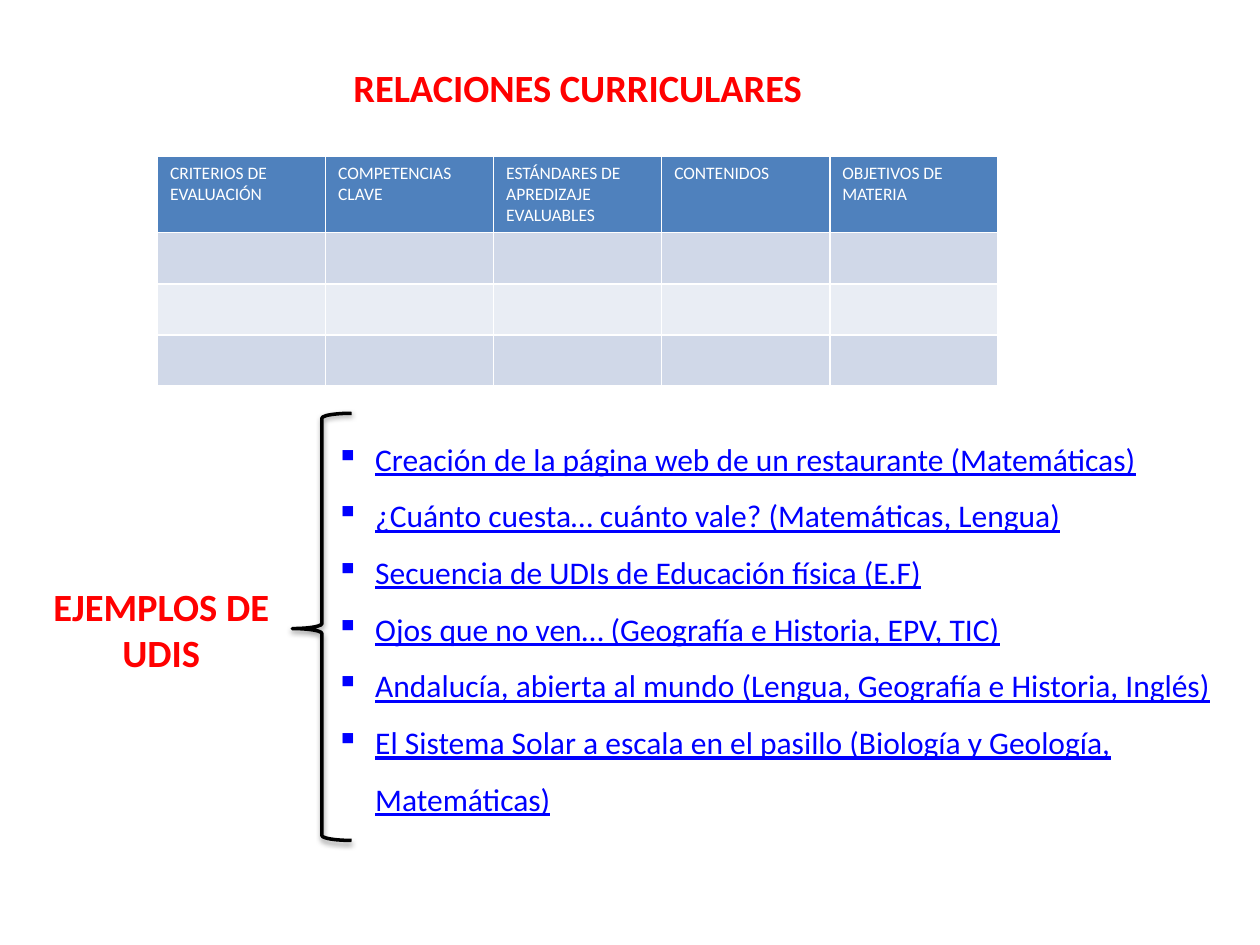
from lxml import etree
from pptx import Presentation
from pptx.dml.color import RGBColor
from pptx.enum.shapes import MSO_SHAPE
from pptx.enum.text import MSO_ANCHOR, PP_ALIGN
from pptx.oxml import parse_xml
from pptx.oxml.ns import nsdecls, qn
from pptx.util import Inches, Pt

LEFT_BRACE = MSO_SHAPE.LEFT_BRACE
LEFT, CENTER = PP_ALIGN.LEFT, PP_ALIGN.CENTER
TOP = MSO_ANCHOR.TOP

FONT = "Calibri"
RED = RGBColor(0xFF, 0x00, 0x00)
LINK_BLUE = RGBColor(0x00, 0x00, 0xFF)
BLACK = RGBColor(0x00, 0x00, 0x00)
WHITE = RGBColor(0xFF, 0xFF, 0xFF)
HEADER_BLUE = RGBColor(0x4F, 0x81, 0xBD)
BAND_DARK = RGBColor(0xD0, 0xD8, 0xE8)
BAND_LIGHT = RGBColor(0xE9, 0xED, 0xF4)

TABLE_HEADERS = [
    "CRITERIOS DE EVALUACIÓN",
    "COMPETENCIAS CLAVE",
    "ESTÁNDARES DE APREDIZAJE EVALUABLES",
    "CONTENIDOS",
    "OBJETIVOS DE MATERIA",
]
ROW_FILLS = [HEADER_BLUE, BAND_DARK, BAND_LIGHT, BAND_DARK]
HEADER_HEIGHT = Inches(0.6)

EXAMPLES = [
    "Creación de la página web de un restaurante (Matemáticas)",
    "¿Cuánto cuesta… cuánto vale? (Matemáticas, Lengua)",
    "Secuencia de UDIs de Educación física (E.F)",
    "Ojos que no ven… (Geografía e Historia, EPV, TIC)",
    "Andalucía, abierta al mundo (Lengua, Geografía e Historia, Inglés)",
    "El Sistema Solar a escala en el pasillo (Biología y Geología, Matemáticas)",
]


def add_bullet(paragraph, character, indent):
    properties = paragraph._p.get_or_add_pPr()
    properties.set("marL", str(indent))
    properties.set("indent", str(-indent))
    etree.SubElement(properties, qn("a:buChar")).set("char", character)


def write_text(frame, lines, size, color, bold=False, underline=False,
               align=LEFT, line_spacing=1.0, bullet=None):
    """Write one paragraph per line, all in the same format."""
    frame.word_wrap = True
    frame.vertical_anchor = TOP
    for index, line in enumerate(lines):
        paragraph = frame.paragraphs[0] if index == 0 else frame.add_paragraph()
        paragraph.alignment = align
        paragraph.line_spacing = line_spacing
        if bullet:
            add_bullet(paragraph, bullet, Inches(0.31))
        run = paragraph.add_run()
        run.text = line
        font = run.font
        font.name = FONT
        font.size = Pt(size)
        font.bold = bold
        font.underline = underline
        font.color.rgb = color


def set_cell_borders(cell, color, width):
    properties = cell._tc.get_or_add_tcPr()
    for position, side in enumerate(("lnL", "lnR", "lnT", "lnB")):
        properties.insert(position, parse_xml(
            f'<a:{side} {nsdecls("a")} w="{width}"><a:solidFill>'
            f'<a:srgbClr val="{color}"/></a:solidFill></a:{side}>'))


def add_title(slide, left, top, width, height):
    title = slide.shapes.title
    title.left, title.top, title.width, title.height = left, top, width, height
    write_text(title.text_frame, ["RELACIONES CURRICULARES"], 22, RED,
               bold=True, align=CENTER)


def add_curriculum_table(slide, left, top, width, height):
    table = slide.shapes.add_table(
        len(ROW_FILLS), len(TABLE_HEADERS), left, top, width, height).table
    body_height = (height - HEADER_HEIGHT) // (len(ROW_FILLS) - 1)
    for row_index, (row, fill) in enumerate(zip(table.rows, ROW_FILLS)):
        row.height = body_height if row_index else HEADER_HEIGHT
        for cell, header in zip(row.cells, TABLE_HEADERS):
            cell.fill.solid()
            cell.fill.fore_color.rgb = fill
            set_cell_borders(cell, WHITE, Pt(1))
            if row_index == 0:
                write_text(cell.text_frame, [header], 10, WHITE)


def add_brace(slide, left, top, width, height):
    brace = slide.shapes.add_shape(LEFT_BRACE, left, top, width, height)
    brace.adjustments[0] = 0.083
    brace.adjustments[1] = 0.504
    brace.fill.background()
    brace.line.color.rgb = BLACK
    brace.line.width = Pt(2)
    brace._element.spPr.append(parse_xml(
        f'<a:effectLst {nsdecls("a")}>'
        f'<a:outerShdw blurRad="{Pt(3.1)}" dist="{Pt(1.6)}" dir="5400000" '
        f'rotWithShape="0"><a:srgbClr val="{BLACK}"><a:alpha val="38000"/>'
        '</a:srgbClr></a:outerShdw></a:effectLst>'))


def add_examples(slide, left, top, width, height):
    """Place the label, the brace and the list of example units."""
    label = slide.shapes.add_textbox(
        left, top + Inches(1.3), Inches(2.56), Inches(0.84))
    write_text(label.text_frame, ["EJEMPLOS DE", "UDIS"], 22, RED,
               bold=True, align=CENTER)
    add_brace(slide, left + Inches(2.32), top, Inches(0.47), Inches(3.39))
    list_offset = Inches(2.57)
    example_list = slide.shapes.add_textbox(
        left + list_offset, top + Inches(0.01), width - list_offset, height)
    write_text(example_list.text_frame, EXAMPLES, 18, LINK_BLUE,
               underline=True, line_spacing=1.5, bullet="▪")


def main():
    presentation = Presentation()
    presentation.slide_width = Inches(10)
    presentation.slide_height = Inches(7.5)
    title_only = presentation.slide_layouts.get_by_name("Title Only")
    slide = presentation.slides.add_slide(title_only)
    add_title(slide, Inches(0.52), Inches(0.46), Inches(8.13), Inches(0.47))
    add_curriculum_table(slide, Inches(1.25), Inches(1.24), Inches(6.67), Inches(1.82))
    add_examples(slide, Inches(0), Inches(3.28), Inches(9.77), Inches(3.58))
    presentation.save("out.pptx")


if __name__ == "__main__":
    main()
